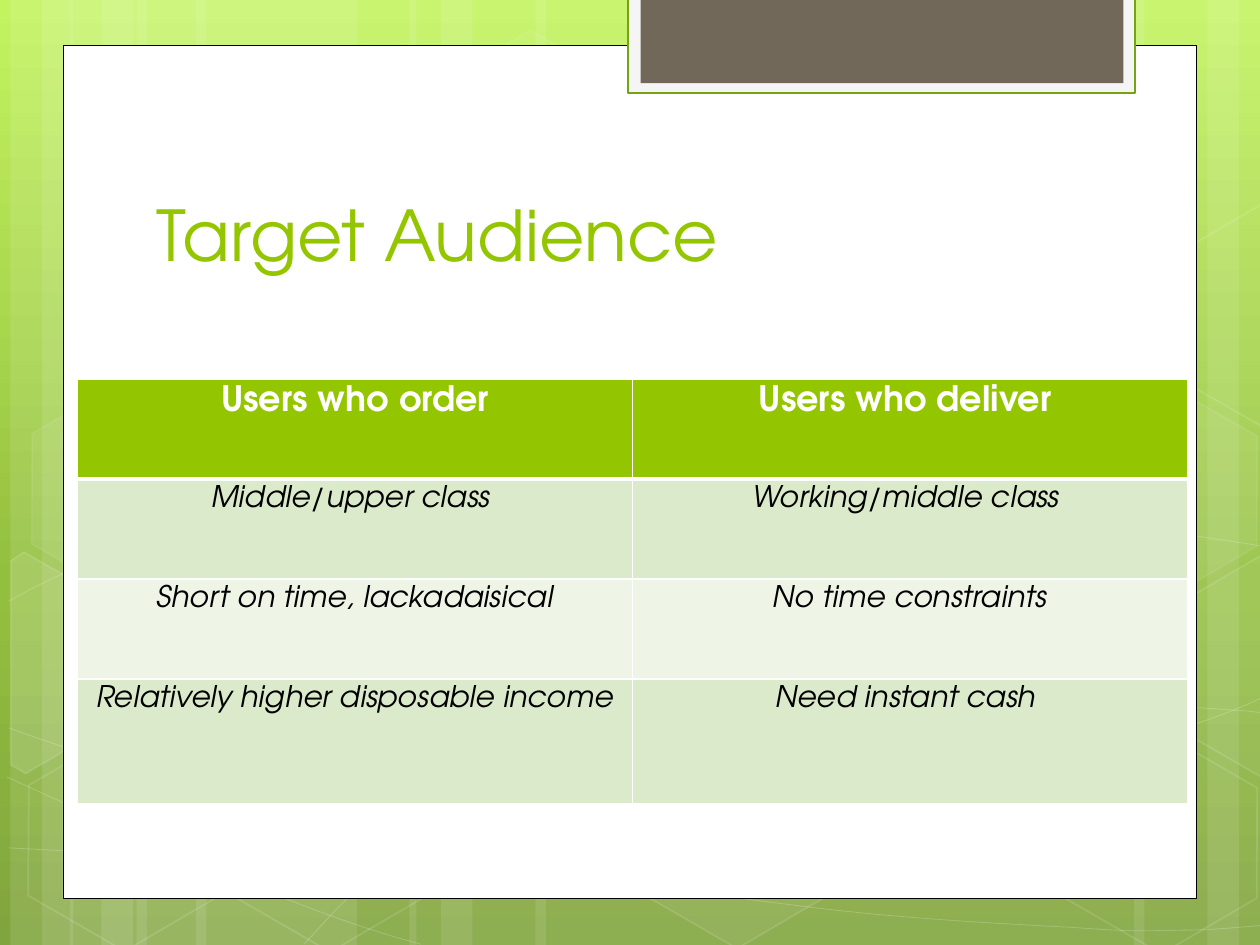
from dataclasses import dataclass
from math import cos, radians, sin
from typing import NamedTuple, Optional

from lxml.etree import SubElement
from pptx import Presentation
from pptx.dml.color import RGBColor
from pptx.enum.shapes import MSO_SHAPE as Preset
from pptx.enum.text import MSO_ANCHOR as Anchor, PP_ALIGN as Align
from pptx.oxml.ns import qn
from pptx.util import Pt


@dataclass(frozen=True)
class Theme:
    font: str = "TeX Gyre Adventor"
    white: str = "FFFFFF"
    black: str = "000000"
    green: str = "94C600"
    tab: str = "F5F5F5"
    tab_line: str = "74A510"
    tab_core: str = "71685A"
    bands: tuple = ("DCEACC", "EEF5E7")
    backdrop: tuple = ((0, "C3F35F"), (62, "93BF3F"), (100, "81A53E"))
    title_size: float = 40
    header_size: float = 20
    body_size: float = 17


THEME = Theme()
TILT = 30


class Paint(NamedTuple):
    color: str
    alpha: int = 100
    width: float = 0


class Box(NamedTuple):
    left: float
    top: float
    width: float
    height: float


class Hexagon(NamedTuple):
    left: float
    top: float
    fill_alpha: int
    line_alpha: int


class CutHexagon(NamedTuple):
    center: tuple
    points: list
    fill_alpha: int


# Soft vertical bars: left edge of each trio, width of its widest bar
BAR_TRIOS = [(6, 126), (40, 126), (234, 222)]
MIRROR_EDGE = 726

# Each curve: a start point, then three points per Bezier segment
CURVES = [
    [(5, 484.5), (44, 486.5), (83, 489), (137, 488), (191, 487.5), (258, 486), (330, 479),
     (402, 471.5), (504, 458), (570, 444), (636, 430.5), (703.5, 409), (725, 396.5)],
    [(5, 343.5), (26, 332), (47, 321), (87, 310), (128, 299.5), (186.5, 283), (250, 278.5),
     (314, 273.5), (391.5, 273), (471, 278.5), (550, 284.5), (682, 306.5), (725, 312.5)],
    [(4, 444), (91.5, 484), (178, 523.5), (240.5, 539.5)],
    [(5, 416), (27.5, 424), (50.5, 432), (92, 443.5), (134, 454.5), (196.5, 472.5),
     (257, 484.5), (317, 497), (392.5, 510), (452, 517), (512, 525), (576, 528), (614, 530),
     (651.5, 533), (661.5, 531.5), (680.5, 531.5), (699, 531), (712, 529.5), (725, 528.5)],
    [(174, 539.5), (187, 525), (200, 510.5), (217.5, 497.5), (235, 484.5), (259, 470),
     (279.5, 460), (299.5, 450), (312, 445.5), (338.5, 438.5), (364.5, 431), (412.5, 421),
     (438, 416), (463.5, 411), (467.5, 411), (489.5, 409.5), (512, 407.5), (547, 405.5),
     (571.5, 404.5), (597, 404), (638, 404.5), (638, 404.5), (638, 404.5), (686, 404.5),
     (686, 404.5), (699, 405.5), (711.5, 406), (718, 407), (724.5, 407.5), (722, 407), (724.5, 407.5)],
]

HEXAGONS = [
    Hexagon(240.5, 26, 4, 8), Hexagon(358, 424, 6, 12), Hexagon(8, 425.5, 0, 12),
    Hexagon(10, 224.5, 7, 8), Hexagon(125.5, 426, 0, 12), Hexagon(542, 326, 10, 12),
    Hexagon(600.5, 427, 0, 12), Hexagon(600.5, 226, 7, 8),
]

RIGHT_CUT = [(666.5, 349), (720.5, 317.5), (726.5, 321), (726.5, 441.5), (721.5, 444), (666.5, 412.5)]
CUT_HEXAGONS = [
    CutHexagon((26, 385), [(6, 320.5), (13.5, 315.5), (69, 347), (68.5, 410.5), (14.5, 442), (6, 437)], 10),
    CutHexagon((709, 374.5), RIGHT_CUT, 4),
    CutHexagon((709, 174), [(x, y - 200.5) for x, y in RIGHT_CUT], 0),
]

TABLE_BOX = Box(44.4, 216.7, 634.2, 242.5)
ROW_HEIGHTS = [57.1, 57.1, 57.1, 71.2]
ROWS = [
    ("Users who order", "Users who deliver "),
    ("Middle/upper class ", "Working/middle class "),
    ("Short on time, lackadaisical", "No time constraints"),
    ("Relatively higher disposable income", "Need instant cash "),
]


def set_color(fill, paint: Optional[Paint]) -> None:
    if paint is None or paint.alpha == 0:
        fill.background()
        return
    fill.solid()
    fill.fore_color.rgb = RGBColor.from_string(paint.color)


def style(shape, fill: Optional[Paint], line: Optional[Paint] = None) -> None:
    shape.shadow.inherit = False
    for target, paint in ((shape.fill, fill), (shape.line.fill, line)):
        set_color(target, paint)
    if line:
        shape.line.width = Pt(line.width)
    # Transparency goes on the colour elements of the fill and the line
    properties = shape._element.spPr
    for parent, paint in ((properties, fill), (properties.find(qn("a:ln")), line)):
        if paint and 0 < paint.alpha < 100:
            color = parent.find(qn("a:solidFill")).find(qn("a:srgbClr"))
            SubElement(color, qn("a:alpha"), val=str(paint.alpha * 1000))


def add_preset(page, preset, box: Box, fill: Optional[Paint], line: Optional[Paint] = None):
    shape = page.shapes.add_shape(preset, *map(Pt, box))
    style(shape, fill, line)
    return shape


def add_outline(page, points: list, close: bool, fill: Optional[Paint], line: Paint):
    start, *rest = [(Pt(x), Pt(y)) for x, y in points]
    builder = page.shapes.build_freeform(*start)
    builder.add_line_segments(rest, close=close)
    shape = builder.convert_to_shape()
    style(shape, fill, line)
    return shape


def add_curve(page, knots: list, line: Paint) -> None:
    shape = add_outline(page, knots, False, None, line)
    # Join every three straight steps into one Bezier segment
    outline = shape._element.find(".//" + qn("a:path"))
    steps = outline.findall(qn("a:lnTo"))
    for first in range(0, len(steps), 3):
        bezier = SubElement(outline, qn("a:cubicBezTo"))
        for step in steps[first:first + 3]:
            bezier.append(step[0])
            outline.remove(step)


def turn_back(points: list, center: tuple) -> list:
    c, s = cos(radians(TILT)), sin(radians(TILT))
    moved = [(x - center[0], y - center[1]) for x, y in points]
    return [(center[0] + x * c + y * s, center[1] - x * s + y * c) for x, y in moved]


def write(frame, text: str, size: float, color: str, align=Align.LEFT, **formats) -> None:
    para = frame.paragraphs[0]
    para.alignment = align
    span = para.add_run()
    span.text = text
    for name, value in {"name": THEME.font, "size": Pt(size), **formats}.items():
        setattr(span.font, name, value)
    span.font.color.rgb = RGBColor.from_string(color)


def add_border(cell, side: str, width: float) -> None:
    line = SubElement(cell._tc.get_or_add_tcPr(), qn(f"a:ln{side}"), w=str(Pt(width)))
    SubElement(SubElement(line, qn("a:solidFill")), qn("a:srgbClr"), val=THEME.white)


def paint_backdrop(page) -> None:
    fill = page.background.fill
    fill.gradient()
    fill.gradient_angle = 270
    stops = page._element.find(".//" + qn("a:gsLst"))
    stops.clear()
    for position, color in THEME.backdrop:
        stop = SubElement(stops, qn("a:gs"), pos=str(position * 1000))
        SubElement(stop, qn("a:srgbClr"), val=color)


def draw_decoration(page) -> None:
    bars = []
    for left, wide in BAR_TRIOS:
        bars += [(left + 72, wide), (left, 36), (left + 18, 60)]
    bars[6:6] = [(MIRROR_EDGE - offset - width, width) for offset, width in ((72, 126), (0, 36), (18, 60))]
    for left, width in bars:
        add_preset(page, Preset.RECTANGLE, Box(left, 0, width, 540), Paint(THEME.white, 10))
    for knots in CURVES:
        add_curve(page, knots, Paint(THEME.white, 20, 0.5))
    for item in HEXAGONS:
        shape = add_preset(page, Preset.HEXAGON, Box(item.left, item.top, 126, 109.5),
                           Paint(THEME.white, item.fill_alpha), Paint(THEME.white, item.line_alpha, 1))
        shape.rotation = TILT
        shape.adjustments[0], shape.adjustments[1] = 0.285, 1.155
    for item in CUT_HEXAGONS:
        shape = add_outline(page, turn_back(item.points, item.center), True,
                            Paint(THEME.white, item.fill_alpha), Paint(THEME.white, 12, 1))
        shape.rotation = TILT


def draw_table(page) -> None:
    table = page.shapes.add_table(len(ROWS), len(ROWS[0]), *map(Pt, TABLE_BOX)).table
    header = {"size": THEME.header_size, "color": THEME.white, "bold": True}
    body = {"size": THEME.body_size, "color": THEME.black, "bold": False, "italic": True}
    for r, texts in enumerate(ROWS):
        table.rows[r].height = Pt(ROW_HEIGHTS[r])
        for c, text in enumerate(texts):
            cell = table.cell(r, c)
            widths = {"L": 1, "R": 1, "T": 3 if r == 1 else 1, "B": 3 if r == 0 else 1}
            for side, width in widths.items():
                add_border(cell, side, width)
            set_color(cell.fill, Paint(THEME.bands[(r - 1) % 2] if r else THEME.green))
            write(cell.text_frame, text, align=Align.CENTER, **(body if r else header))


def main() -> None:
    deck = Presentation()
    deck.slide_width, deck.slide_height = Pt(720), Pt(540)
    page = deck.slides.add_slide(deck.slide_layouts[6])
    paint_backdrop(page)
    draw_decoration(page)
    # White board with the tab at its top
    add_preset(page, Preset.RECTANGLE, Box(36, 26, 648, 487.3), Paint(THEME.white), Paint(THEME.black, width=0.5))
    add_preset(page, Preset.RECTANGLE, Box(359, -1.5, 289.7, 54.7), Paint(THEME.tab),
               Paint(THEME.tab_line, width=1.25))
    add_preset(page, Preset.RECTANGLE, Box(366, -1.5, 276, 49), Paint(THEME.tab_core))
    # Title
    frame = page.shapes.add_textbox(*map(Pt, Box(82.4, 71, 553, 90))).text_frame
    frame.word_wrap, frame.vertical_anchor = True, Anchor.BOTTOM
    write(frame, "Target Audience", THEME.title_size, THEME.green)
    draw_table(page)
    deck.save("out.pptx")


if __name__ == "__main__":
    main()
